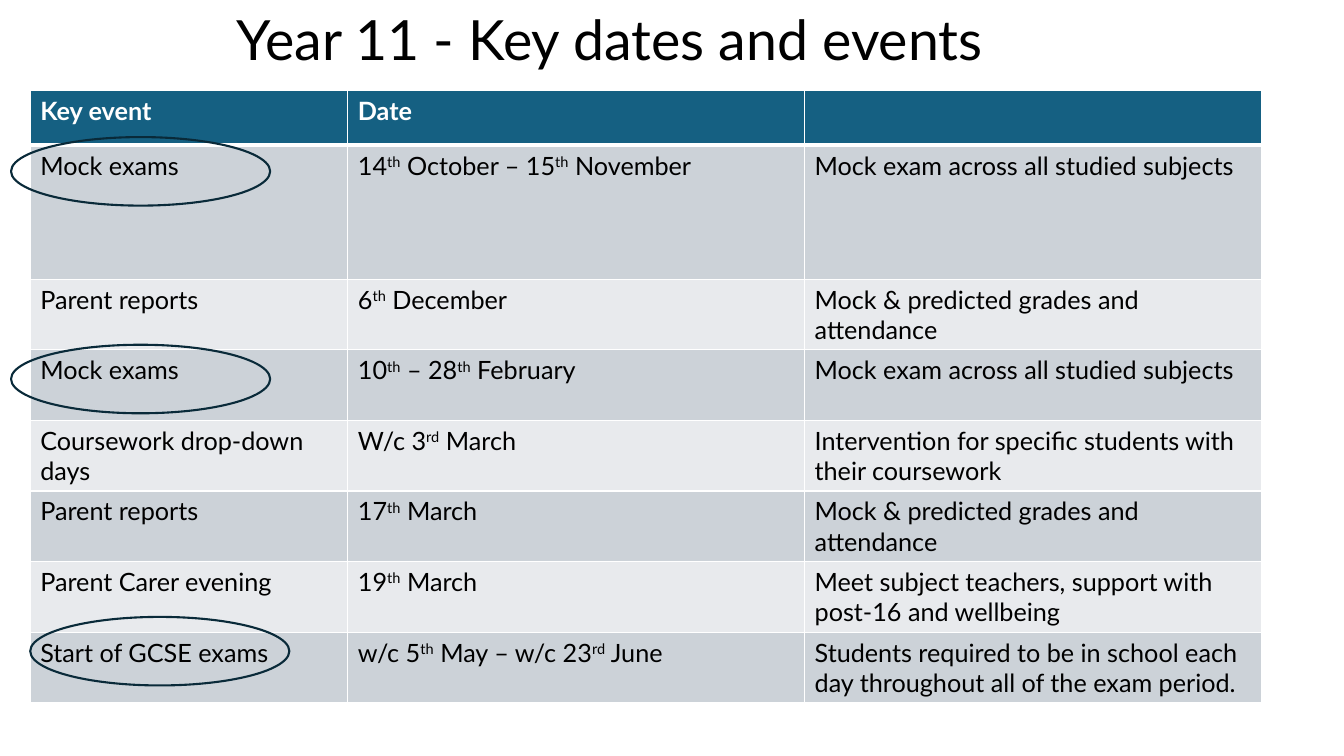
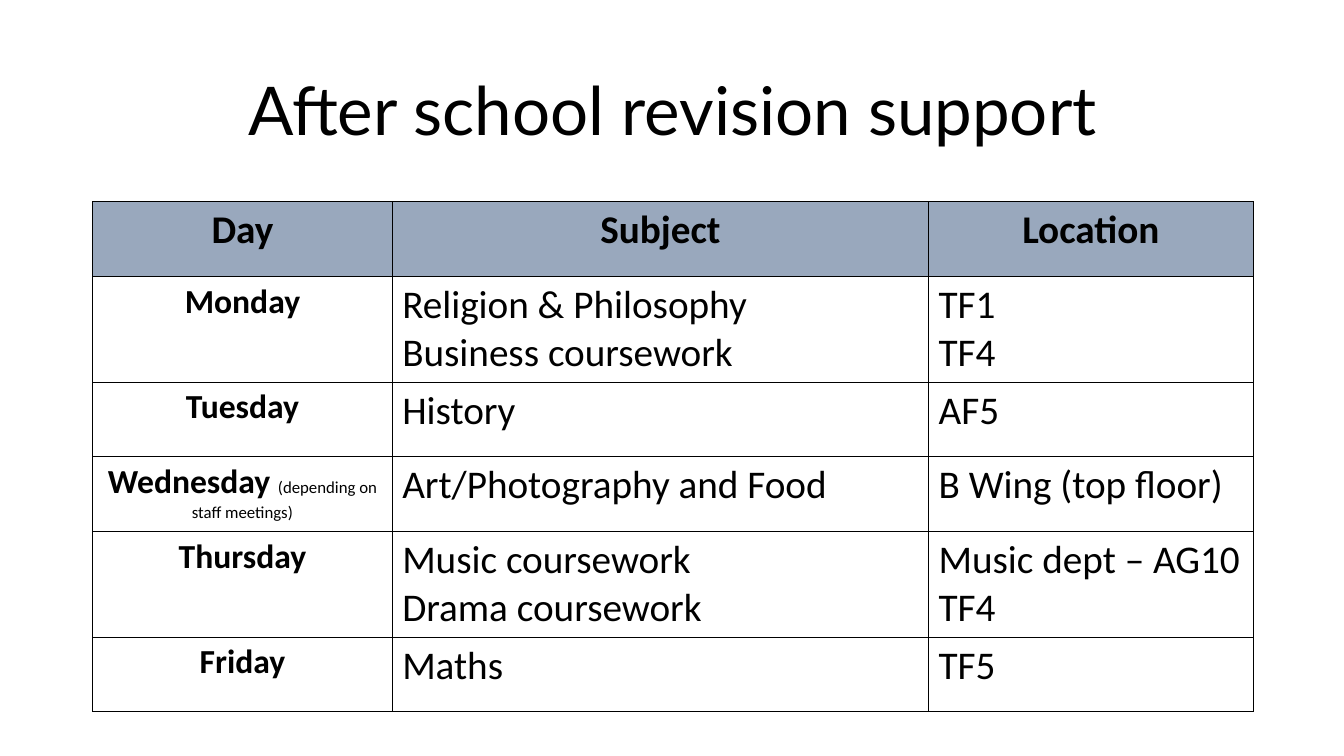
from dataclasses import dataclass

from lxml import etree
from pptx import Presentation
from pptx.dml.color import RGBColor
from pptx.enum.shapes import MSO_SHAPE
from pptx.enum.text import MSO_ANCHOR, PP_ALIGN
from pptx.oxml.ns import qn
from pptx.slide import Slide
from pptx.table import _Cell
from pptx.util import Inches, Pt

COLORS = {
    "black": "000000",
    "white": "FFFFFF",
    "teal": "156082",
    "grey_dark": "CCD2D8",
    "grey_light": "E8EAED",
    "slate": "99A8BD",
    "ring": "092A39",
}
TITLE_FONT = "Lato"
MARK = "^"  # encloses the text that is raised or set small


@dataclass(frozen=True)
class Box:
    left: float
    top: float
    width: float
    height: float

    def lengths(self) -> tuple:
        return tuple(Inches(v) for v in (self.left, self.top, self.width, self.height))


@dataclass(frozen=True)
class GridStyle:
    font: str
    header_size: float
    day_size: float  # first column
    body_size: float
    header_color: str
    header_fill: str
    bands: tuple  # fills of the body rows in turn; empty for none
    border: str
    border_width: float
    header_rule: float
    centered: bool = False  # header and first column
    bold_first: bool = False
    note_size: float = 0  # size of marked text; 0 raises it instead


EVENT_STYLE = GridStyle(TITLE_FONT, 18, 18, 18, "white", "teal",
                        ("grey_dark", "grey_light"), "white", 1, 3)
SUPPORT_STYLE = GridStyle("Calibri", 28, 24, 28, "black", "slate",
                          (), "black", 0.75, 0.75,
                          centered=True, bold_first=True, note_size=12)

EVENTS = [
    ("Key event", "Date", ""),
    ("Mock exams", "14^th^ October – 15^th^ November", "Mock exam across all studied subjects"),
    ("Parent reports", "6^th^ December", "Mock & predicted grades and attendance"),
    ("Mock exams", "10^th^ – 28^th^ February", "Mock exam across all studied subjects"),
    ("Coursework drop-down days", "W/c 3^rd^ March",
     "Intervention for specific students with their coursework"),
    ("Parent reports", "17^th^ March", "Mock & predicted grades and attendance"),
    ("Parent Carer evening", "19^th^ March",
     "Meet subject teachers, support with post-16 and wellbeing"),
    ("Start of GCSE exams", "w/c 5^th^ May – w/c 23^rd^ June",
     "Students required to be in school each day throughout all of the exam period."),
]
SUPPORT = [
    ("Day", "Subject", "Location"),
    ("Monday", "Religion & Philosophy\nBusiness coursework", "TF1\nTF4"),
    ("Tuesday", "History", "AF5"),
    ("Wednesday ^(depending on staff meetings)^", "Art/Photography and Food",
     "B Wing (top floor)"),
    ("Thursday", "Music coursework\nDrama coursework", "Music dept – AG10\nTF4"),
    ("Friday", "Maths", "TF5"),
]


def rgb(name: str) -> RGBColor:
    return RGBColor.from_string(COLORS[name])


def add_title(slide: Slide, text: str, box: Box, size: float, align: PP_ALIGN) -> None:
    frame = slide.shapes.add_textbox(*box.lengths()).text_frame
    frame.word_wrap = True
    frame.vertical_anchor = MSO_ANCHOR.MIDDLE
    title = frame.paragraphs[0]
    title.text = text
    title.alignment = align
    title.line_spacing = 0.9
    title.font.name = TITLE_FONT
    title.font.size = Pt(size)
    title.font.color.rgb = rgb("black")


def set_borders(cell: _Cell, color: str, widths: dict[str, float]) -> None:
    properties = cell._tc.get_or_add_tcPr()
    for side, width in widths.items():
        line = etree.SubElement(properties, qn(f"a:ln{side}"), w=str(Pt(width)))
        fill = etree.SubElement(line, qn("a:solidFill"))
        etree.SubElement(fill, qn("a:srgbClr"), val=COLORS[color])


def write_cell(cell: _Cell, text: str, style: GridStyle, row: int, column: int) -> None:
    header, first = row == 0, column == 0
    size = style.header_size if header else style.day_size if first else style.body_size
    frame = cell.text_frame
    for index, line in enumerate(text.split("\n")):
        paragraph = frame.add_paragraph() if index else frame.paragraphs[0]
        centered = style.centered and (header or first)
        paragraph.alignment = PP_ALIGN.CENTER if centered else PP_ALIGN.LEFT
        font = paragraph.font
        font.name = style.font
        font.size = Pt(size)
        font.bold = header or (first and style.bold_first)
        font.color.rgb = rgb(style.header_color if header else "black")
        for position, piece in enumerate(line.split(MARK)):
            if not piece:
                continue
            run = paragraph.add_run()
            run.text = piece
            if position % 2 and style.note_size:
                run.font.size = Pt(style.note_size)
                run.font.bold = False
            elif position % 2:
                run._r.get_or_add_rPr().set("baseline", "30000")


def add_grid(slide: Slide, rows: list, left: float, top: float, widths: list[float],
             heights: list[float], style: GridStyle) -> None:
    box = Box(left, top, sum(widths), sum(heights))
    table = slide.shapes.add_table(len(rows), len(widths), *box.lengths()).table
    table.first_row = table.horz_banding = False
    for column, width in zip(table.columns, widths):
        column.width = Inches(width)
    for r, (texts, height) in enumerate(zip(rows, heights)):
        table.rows[r].height = Inches(height)
        for c, text in enumerate(texts):
            cell = table.cell(r, c)
            write_cell(cell, text, style, r, c)
            thin, rule = style.border_width, style.header_rule
            set_borders(cell, style.border, {
                "L": thin, "R": thin,
                "T": rule if r == 1 else thin,
                "B": rule if r == 0 else thin,
            })
            if r and not style.bands:
                cell.fill.background()
                continue
            cell.fill.solid()
            fill = style.bands[(r - 1) % len(style.bands)] if r else style.header_fill
            cell.fill.fore_color.rgb = rgb(fill)


def add_ring(slide: Slide, left: float, top: float) -> None:
    ring = slide.shapes.add_shape(MSO_SHAPE.OVAL, *Box(left, top, 2.57, 0.68).lengths())
    ring.shadow.inherit = False
    ring.fill.background()
    ring.line.color.rgb = rgb("ring")
    ring.line.width = Pt(1.5)


def main() -> None:
    deck = Presentation()
    deck.slide_width, deck.slide_height = Inches(13.33), Inches(7.5)
    blank = deck.slide_layouts[6]

    # Key dates, with the exam periods ringed
    dates = deck.slides.add_slide(blank)
    add_title(dates, "Year 11 - Key dates and events", Box(2.25, 0.13, 11.08, 0.58),
              39.6, PP_ALIGN.LEFT)
    add_grid(dates, EVENTS, 0.3, 0.9, [3.15, 4.53, 4.53],
             [0.54, 1.33] + [0.7] * 6, EVENT_STYLE)
    for left, top in ((0.11, 1.36), (0.11, 3.42), (0.3, 6.12)):
        add_ring(dates, left, top)

    # Weekly revision support
    support = deck.slides.add_slide(blank)
    add_title(support, "After school revision support", Box(0.92, 0.4, 11.5, 1.45),
              48, PP_ALIGN.CENTER)
    heights = [1.05 if "\n" in subject else 0.74 for _, subject, _ in SUPPORT]
    add_grid(support, SUPPORT, 0.92, 2, [2.97, 5.32, 3.22], heights, SUPPORT_STYLE)

    deck.save("out.pptx")


if __name__ == "__main__":
    main()
